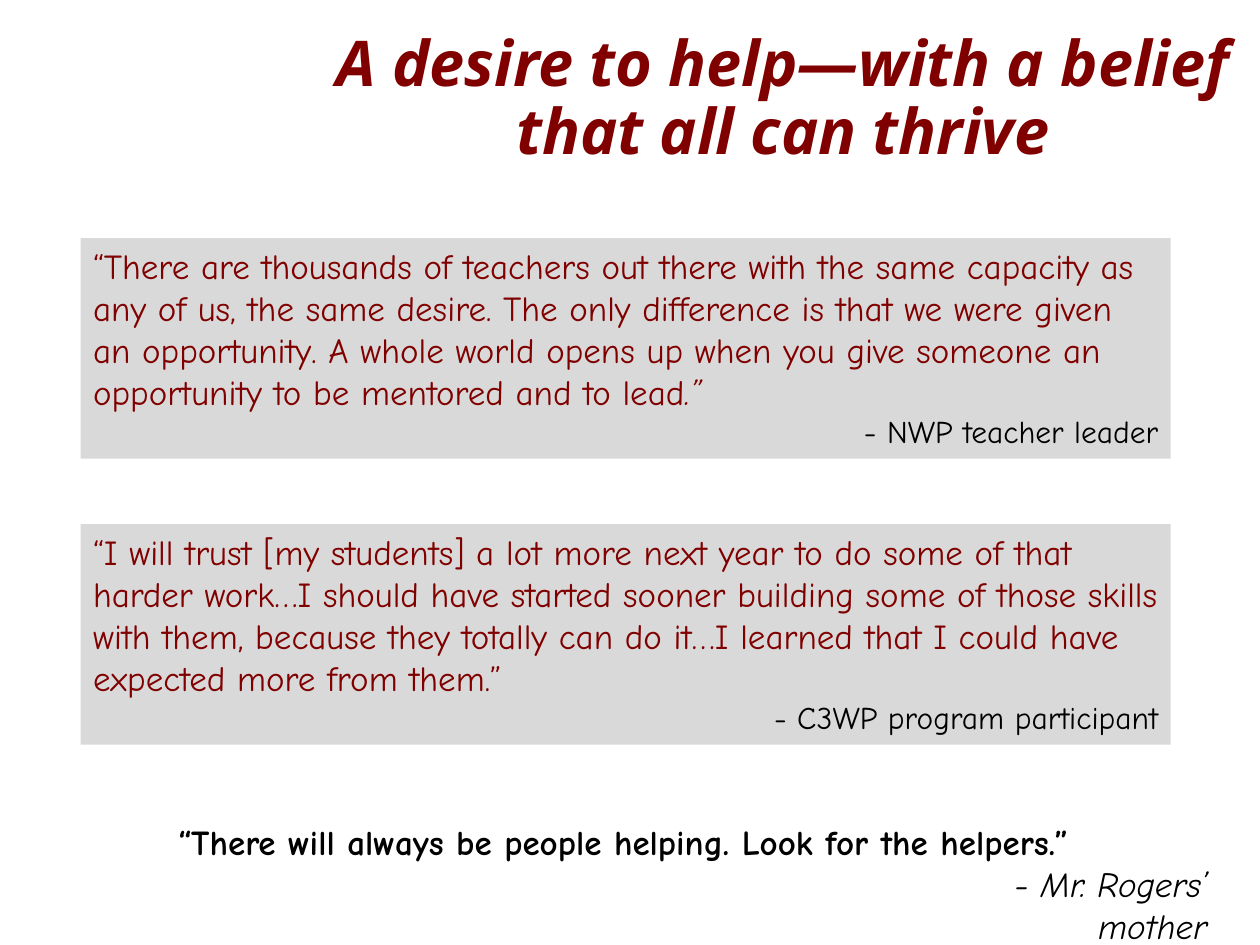
"""Build a slide of quotations about helping others thrive."""
from dataclasses import dataclass

from pptx import Presentation
from pptx.dml.color import RGBColor
from pptx.enum.shapes import MSO_SHAPE
from pptx.enum.text import MSO_ANCHOR, MSO_AUTO_SIZE, PP_ALIGN
from pptx.util import Emu, Pt

RECT = MSO_SHAPE.RECTANGLE
TOP, MIDDLE = MSO_ANCHOR.TOP, MSO_ANCHOR.MIDDLE
LEFT, CENTER, RIGHT = PP_ALIGN.LEFT, PP_ALIGN.CENTER, PP_ALIGN.RIGHT
NO_FIT = MSO_AUTO_SIZE.NONE
EMU_PER_PX = 9144


def px(n):
    return Emu(n * EMU_PER_PX)


@dataclass(frozen=True)
class Theme:
    maroon: RGBColor = RGBColor(0x80, 0x00, 0x00)
    black: RGBColor = RGBColor(0x00, 0x00, 0x00)
    panel: RGBColor = RGBColor(0xD9, 0xD9, 0xD9)
    title_font: str = "Open Sans"
    body_font: str = "Comic Neue"
    title_size: int = 36
    quote_size: int = 20
    source_size: int = 18


class Deck:
    def __init__(self, prs, theme):
        self.theme = theme
        self.s = prs.slides.add_slide(prs.slide_layouts[5])

    def frame(self, sp, anchor=TOP):
        tf = sp.text_frame
        values = {"word_wrap": True, "auto_size": NO_FIT, "vertical_anchor": anchor}
        for name, value in values.items():
            setattr(tf, name, value)
        return tf

    def add_runs(self, p, runs, align, size, color, **font):
        p.alignment = align
        base = {"name": self.theme.body_font, "size": Pt(size),
                "bold": False, "italic": False, **font}
        for text, extra in runs:
            r = p.add_run()
            r.text = text
            r.font.color.rgb = color
            for name, value in {**base, **extra}.items():
                setattr(r.font, name, value)

    def title(self, text, box):
        t, sp = self.theme, self.s.shapes.title
        for name, value in zip(("left", "top", "width", "height"), box):
            setattr(sp, name, px(value))
        p = self.frame(sp, MIDDLE).paragraphs[0]
        p.line_spacing = 0.9
        self.add_runs(p, [(text, {})], CENTER, t.title_size, t.maroon,
                      name=t.title_font, bold=True, italic=True)

    def quote_panel(self, runs, source, box):
        t = self.theme
        sp = self.s.shapes.add_shape(RECT, *map(px, box))
        sp.shadow.inherit = False
        sp.fill.solid()
        sp.fill.fore_color.rgb = t.panel
        sp.line.fill.background()
        tf = self.frame(sp)
        self.add_runs(tf.paragraphs[0], runs, LEFT, t.quote_size, t.maroon)
        self.add_runs(tf.add_paragraph(), [(source, {})], RIGHT, t.source_size, t.black)

    def closing_quote(self, text, source, box, source_indent):
        t = self.theme
        tf = self.frame(self.s.shapes.add_textbox(*map(px, box)))
        self.add_runs(tf.paragraphs[0], [(text, {})], CENTER, t.quote_size, t.black, bold=True)
        p = tf.add_paragraph()
        p._p.get_or_add_pPr().set("marL", str(px(source_indent)))
        self.add_runs(p, [(source, {})], RIGHT, t.quote_size, t.black, italic=True)


QUOTES = [
    ([("“There are thousands of teachers out there with the same capacity as any of us, "
       "the same desire. The only difference is that we were given an opportunity. "
       "A whole world opens up when you give someone an opportunity to be mentored "
       "and to lead", {}), (".”", {"italic": True})],
     "- NWP teacher leader"),
    ([("“I will trust [my students] a lot more next year to do some of that harder "
       "work…I should have started sooner building some of those skills with them, "
       "because they totally can do it…I learned that I could have expected more "
       "from them.”", {})],
     "- C3WP program participant"),
]
PANEL_TOP, PANEL_PITCH = 189, 227


def main():
    prs = Presentation()
    prs.slide_width, prs.slide_height = px(1000), px(750)
    deck = Deck(prs, Theme())
    deck.title("A desire to help—with a belief that all can thrive", (243, 0, 757, 159))
    deck.closing_quote("“There will always be people helping. Look for the helpers.”",
                       "- Mr. Rogers’ mother", (22, 646, 946, 77), 700)
    for i, (runs, source) in enumerate(QUOTES):
        deck.quote_panel(runs, source, (64, PANEL_TOP + i * PANEL_PITCH, 865, 175))
    prs.save("out.pptx")


if __name__ == "__main__":
    main()
